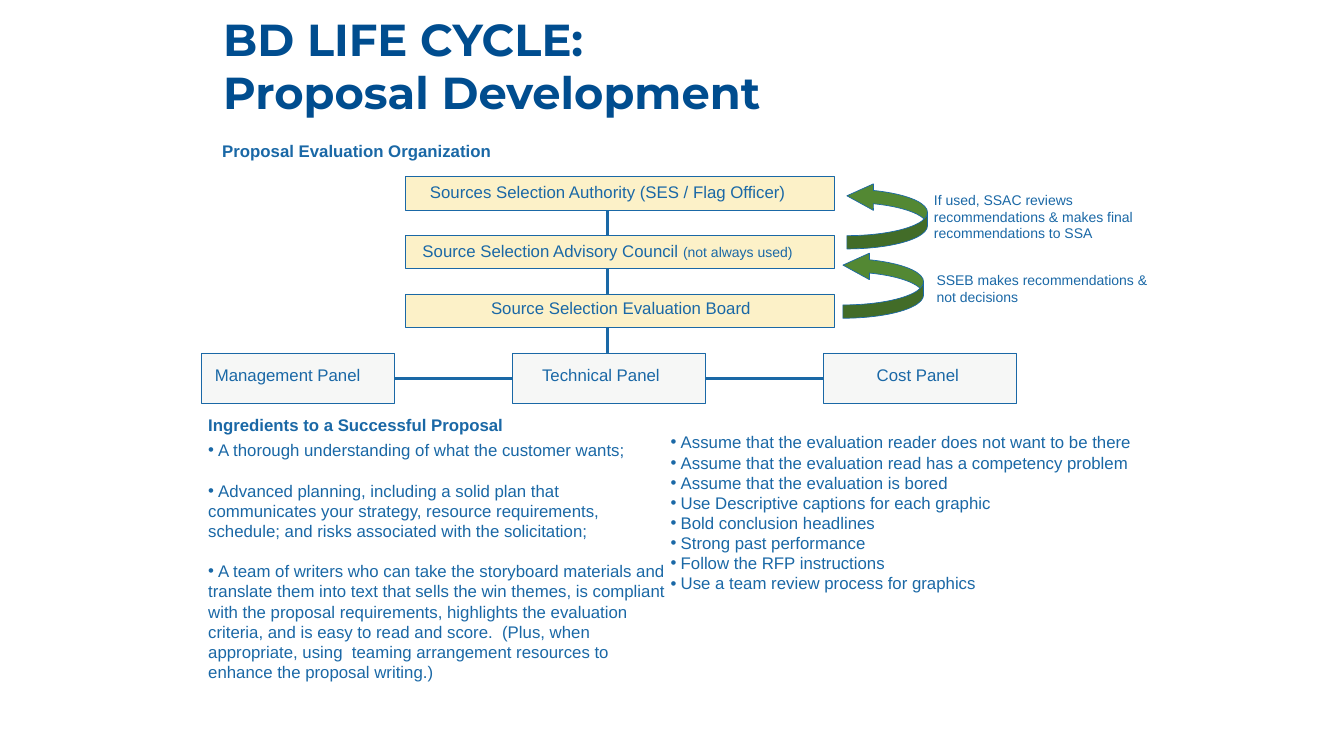
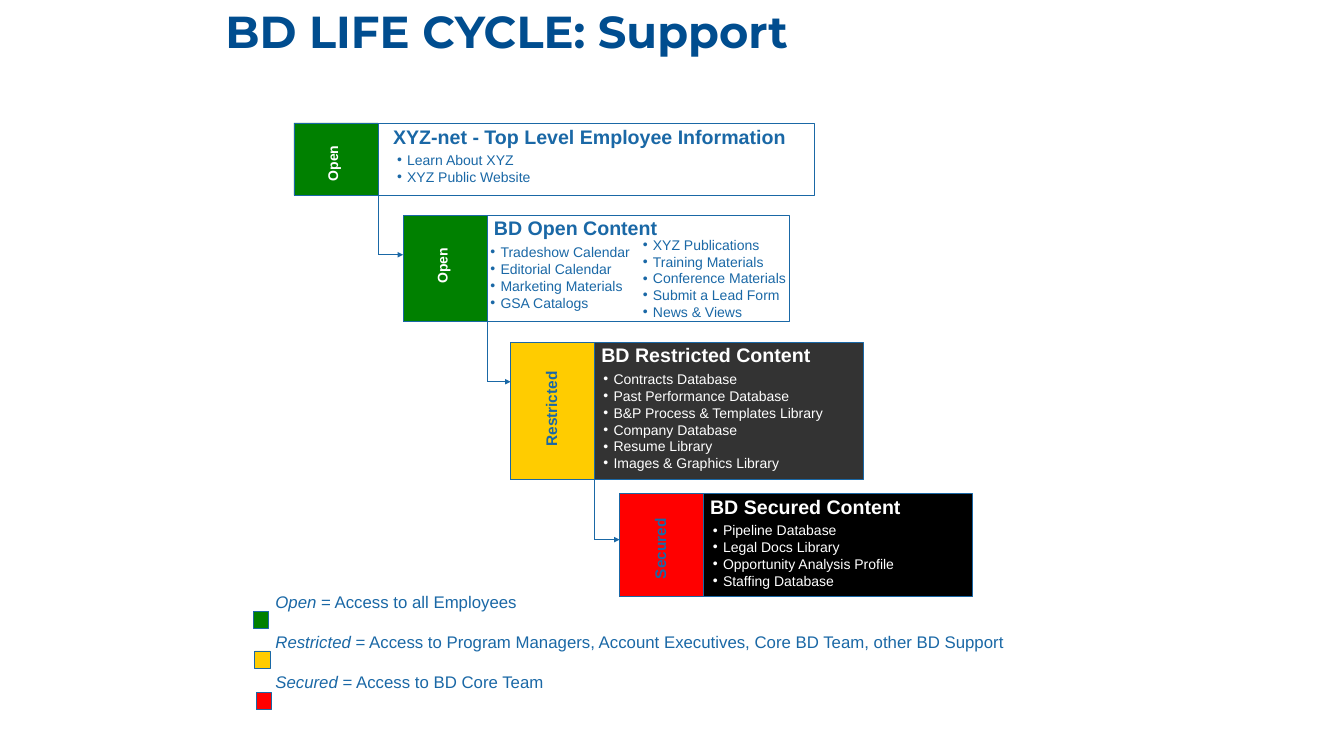
from pptx import Presentation
from pptx.dml.color import RGBColor
from pptx.enum.shapes import MSO_CONNECTOR, MSO_SHAPE
from pptx.enum.text import MSO_ANCHOR, MSO_AUTO_SIZE, PP_ALIGN
from pptx.oxml.ns import qn
from pptx.util import Cm, Pt
from lxml import etree

RECT = MSO_SHAPE.RECTANGLE
CURVED_ARROW = MSO_SHAPE.CURVED_UP_ARROW
STRAIGHT = MSO_CONNECTOR.STRAIGHT
TOP = MSO_ANCHOR.TOP
LEFT = PP_ALIGN.LEFT
FIXED = MSO_AUTO_SIZE.NONE

BLUE, NAVY, WHITE, BLACK = "1A68A6", "004D8F", "FFFFFF", "000000"
GREEN, YELLOW, RED, CHARCOAL = "008000", "FFCC00", "FF0000", "333333"
CREAM, GRAY, LEAF = "F9DC77", "EAEBEA", "538833"

BODY = {"name": "Arial", "size": Pt(18), "color": BLUE}
SMALL = BODY | {"size": Pt(15)}
SUBHEAD = BODY | {"bold": True}
TIER_HEAD = SUBHEAD | {"size": Pt(21)}
TITLE = {"name": "Montserrat", "size": Pt(48), "bold": True, "color": NAVY}
BLANK_LINE = 21.6
BULLET_GAP = 0.38

BOARDS = [
    (["Sources Selection Authority (SES / Flag Officer)"], 16, 6.76, 14.07),
    (["Source Selection Advisory Council ", ("(not always used)", {"size": Pt(15)})], 15.72, 8.97, 14.66),
    (["Source Selection Evaluation Board"], 18.31, 11.13, 10.41),
]
PANELS = [("Management Panel", 7.87, 6.07), ("Technical Panel", 20.24, 5), ("Cost Panel", 32.89, 3.66)]
REVIEWS = [
    ("SSEB makes recommendations & not decisions", (35.15, 10.13, 8.66, 1.55), (32.13, 9.25)),
    ("If used, SSAC reviews recommendations & makes final recommendations to SSA",
     (35.05, 7.11, 8.43, 2.18), (32.28, 6.63)),
]
SUBHEADS = [
    ("Proposal Evaluation Organization", (8.15, 5.21, 15.34, 1.02)),
    ("Ingredients to a Successful Proposal", (7.62, 15.57, 15.34, 1.02)),
]
INGREDIENTS = [
    "A thorough understanding of what the customer wants;",
    "Advanced planning, including a solid plan that communicates your strategy, resource requirements, "
    "schedule; and risks associated with the solicitation;",
    "A team of writers who can take the storyboard materials and translate them into text that sells "
    "the win themes, is compliant with the proposal requirements, highlights the evaluation criteria, "
    "and is easy to read and score.  (Plus, when appropriate, using  teaming arrangement resources to "
    "enhance the proposal writing.)",
]
ASSUMPTIONS = [
    "Assume that the evaluation reader does not want to be there",
    "Assume that the evaluation read has a competency problem",
    "Assume that the evaluation is bored",
    "Use Descriptive captions for each graphic",
    "Bold conclusion headlines",
    "Strong past performance",
    "Follow the RFP instructions",
    "Use a team review process for graphics",
]

OPEN_LABEL = {"size": Pt(15), "color": WHITE}
CLOSED_LABEL = {"size": Pt(16.5)}
TIERS = [
    {"box": (11.11, 4.65, 19.69, 2.74), "fill": WHITE, "ink": BLUE, "access": GREEN,
     "label": ("Open", (11.63, 5.72, 1.88, 0.89), OPEN_LABEL),
     "heading": ("XYZ-net - Top Level Employee Information", (14.61, 4.6, 15.52, 1.14)),
     "lists": [((14.76, 5.61, 13.34, 1.55), ["Learn About XYZ", "XYZ Public Website"])]},
    {"box": (15.24, 8.15, 14.61, 4.01), "fill": None, "ink": BLUE, "access": GREEN, "entry": 1.48,
     "label": ("Open", (15.77, 9.58, 1.88, 0.89), OPEN_LABEL),
     "heading": ("BD Open Content", (18.42, 8.05, 6.76, 1.14)),
     "lists": [
         ((18.29, 9.09, 6.1, 2.82),
          ["Tradeshow Calendar", "Editorial Calendar", "Marketing Materials", "GSA Catalogs"]),
         ((24.05, 8.81, 6.22, 3.45),
          ["XYZ Publications", "Training Materials", "Conference Materials", "Submit a Lead Form",
           "News & Views"])]},
    {"box": (19.3, 12.95, 13.34, 5.18), "fill": CHARCOAL, "ink": WHITE, "access": YELLOW, "entry": 1.48,
     "label": ("Restricted", (18.69, 14.5, 4.29, 0.97), CLOSED_LABEL),
     "heading": ("BD Restricted Content", (22.48, 12.83, 8.48, 1.14)),
     "lists": [((22.56, 13.89, 9.14, 4.11),
                ["Contracts Database", "Past Performance Database", "B&P Process & Templates Library",
                 "Company Database", "Resume Library", "Images & Graphics Library"])]},
    {"box": (23.42, 18.67, 13.34, 3.89), "fill": BLACK, "ink": WHITE, "access": RED, "entry": 1.73,
     "label": ("Secured", (22.81, 19.51, 4.29, 0.97), CLOSED_LABEL),
     "heading": ("BD Secured Content", (26.59, 18.57, 7.77, 1.14)),
     "lists": [((26.7, 19.61, 13.34, 2.82),
                ["Pipeline Database", "Legal Docs Library", "Opportunity Analysis Profile",
                 "Staffing Database"])]},
]
LEGEND = [
    ("Open", " = Access to all Employees", GREEN, 9.58, 23.11),
    ("Restricted", " = Access to Program Managers, Account Executives, Core BD Team, other BD Support",
     YELLOW, 9.63, 24.61),
    ("Secured", " = Access to BD Core Team", RED, 9.68, 26.19),
]


def rgb(code):
    return RGBColor.from_string(code)


def cms(lengths):
    return [Cm(length) for length in lengths]


def add_run(paragraph, words, style):
    run = paragraph.add_run()
    run.text = words
    for key, value in style.items():
        if key == "color":
            run.font.color.rgb = rgb(value)
        else:
            setattr(run.font, key, value)


def add_bullet(paragraph):
    props = paragraph._p.get_or_add_pPr()
    props.set("marL", "0")
    props.set("indent", "0")
    etree.SubElement(props, qn("a:buFont"), typeface="Arial")
    etree.SubElement(props, qn("a:buChar"), char="•")
    stops = etree.SubElement(props, qn("a:tabLst"))
    etree.SubElement(stops, qn("a:tab"), pos=str(Cm(BULLET_GAP)), algn="l")


def write(frame, paragraphs, style, bullets=False, gap=0):
    for index, parts in enumerate(paragraphs):
        paragraph = frame.add_paragraph() if index else frame.paragraphs[0]
        if bullets:
            add_bullet(paragraph)
        paragraph.alignment = LEFT
        if index and gap:
            paragraph.space_before = Pt(gap)
        for part in [parts] if isinstance(parts, str) else parts:
            words, change = (part, {}) if isinstance(part, str) else part
            add_run(paragraph, "\t" + words if bullets else words, style | change)


def add_text(slide, box, paragraphs, style, bullets=False, gap=0, wrap=True, rotation=0):
    holder = slide.shapes.add_textbox(*cms(box))
    holder.rotation = rotation
    holder.text_frame.word_wrap = wrap
    write(holder.text_frame, paragraphs, style, bullets, gap)


def add_block(slide, box, fill, alpha=None, preset=RECT):
    block = slide.shapes.add_shape(preset, *cms(box))
    block.shadow.inherit = False
    block.line.color.rgb = rgb(BLUE)
    block.line.width = Pt(0.75)
    if fill is None:
        block.fill.background()
        return block
    block.fill.solid()
    block.fill.fore_color.rgb = rgb(fill)
    if alpha:
        color = block._element.spPr.find(qn("a:solidFill"))[0]
        etree.SubElement(color, qn("a:alpha"), val=str(alpha * 1000))
    return block


def add_line(slide, ends, width, arrow=False):
    line = slide.shapes.add_connector(STRAIGHT, *cms(ends))
    line.line.color.rgb = rgb(BLUE)
    line.line.width = Pt(width)
    if arrow:
        etree.SubElement(line.line._get_or_add_ln(), qn("a:tailEnd"), type="triangle")
    etree.SubElement(line._element.spPr, qn("a:effectLst"))


def add_titled_slide(prs, lines, box):
    slide = prs.slides.add_slide(prs.slide_layouts[5])
    title = slide.shapes.title
    title.left, title.top, title.width, title.height = cms(box)
    for key, value in {"word_wrap": True, "auto_size": FIXED, "vertical_anchor": TOP}.items():
        setattr(title.text_frame, key, value)
    write(title.text_frame, lines, TITLE)
    return slide


def build_proposal(prs):
    slide = add_titled_slide(prs, ["BD LIFE CYCLE:", "Proposal Development"], (8.18, 0.3, 35.51, 4.37))

    board_top, board_pitch, board_height, spine = 6.67, 2.22, 1.27, 22.96
    for index, (label, left, top, width) in enumerate(BOARDS):
        y = board_top + index * board_pitch
        add_block(slide, (15.34, y, 16.21, board_height), CREAM, 40)
        add_line(slide, (spine, y + board_height, spine, y + board_pitch), 3)
        add_text(slide, (left, top, width, 1.02), [label], BODY, wrap=False)

    panel_left, panel_top, panel_pitch, panel_width, panel_height = 7.62, 13.34, 11.75, 7.3, 1.91
    link = panel_top + panel_height / 2
    for index, (label, left, width) in enumerate(PANELS):
        x = panel_left + index * panel_pitch
        add_block(slide, (x, panel_top, panel_width, panel_height), GRAY, 40)
        if index:
            add_line(slide, (x - panel_pitch + panel_width, link, x, link), 3)
        add_text(slide, (left, 13.67, width, 1.02), [label], BODY, wrap=False)

    for note, box, corner in REVIEWS:
        arrow = add_block(slide, (*corner, 2.51, 3.05), LEAF, preset=CURVED_ARROW)
        arrow.rotation = 270
        for index, value in enumerate((0.2, 0.4, 0.4)):
            arrow.adjustments[index] = value
        add_text(slide, box, [note], SMALL)

    for heading, box in SUBHEADS:
        add_text(slide, box, [heading], SUBHEAD)
    add_text(slide, (7.62, 16.51, 17.78, 9.5), INGREDIENTS, BODY, bullets=True, gap=BLANK_LINE)
    add_text(slide, (25.1, 16.21, 18.42, 6.4), ASSUMPTIONS, BODY, bullets=True)


def build_support(prs):
    slide = add_titled_slide(prs, ["BD LIFE CYCLE: Support"], (8.26, 0, 35.51, 2.31))

    access_width = 3.18
    elbow = None
    for tier in TIERS:
        left, top, width, height = tier["box"]
        ink = {"color": tier["ink"]}
        add_block(slide, tier["box"], tier["fill"])
        add_block(slide, (left, top, access_width, height), tier["access"])
        label, box, style = tier["label"]
        add_text(slide, box, [label], SUBHEAD | style, wrap=False, rotation=270)
        heading, box = tier["heading"]
        add_text(slide, box, [heading], TIER_HEAD | ink, wrap=False)
        for box, items in tier["lists"]:
            add_text(slide, box, items, SMALL | ink, bullets=True)
        if elbow:
            x, start = elbow
            entry = top + tier["entry"]
            add_line(slide, (x, start, x, entry), 0.75)
            add_line(slide, (x, entry, left, entry), 0.75, arrow=True)
        elbow = left + access_width, top + height

    meanings = [[(level, {"italic": True}), meaning] for level, meaning, *_ in LEGEND]
    add_text(slide, (10.16, 22.23, 28.91, 4.11), meanings, BODY, gap=BLANK_LINE)
    for _, _, color, left, top in LEGEND:
        add_block(slide, (left, top, 0.58, 0.64), color)


def main():
    prs = Presentation()
    prs.slide_width, prs.slide_height = Cm(50.8), Cm(28.58)
    build_proposal(prs)
    build_support(prs)
    prs.save("out.pptx")


if __name__ == "__main__":
    main()
